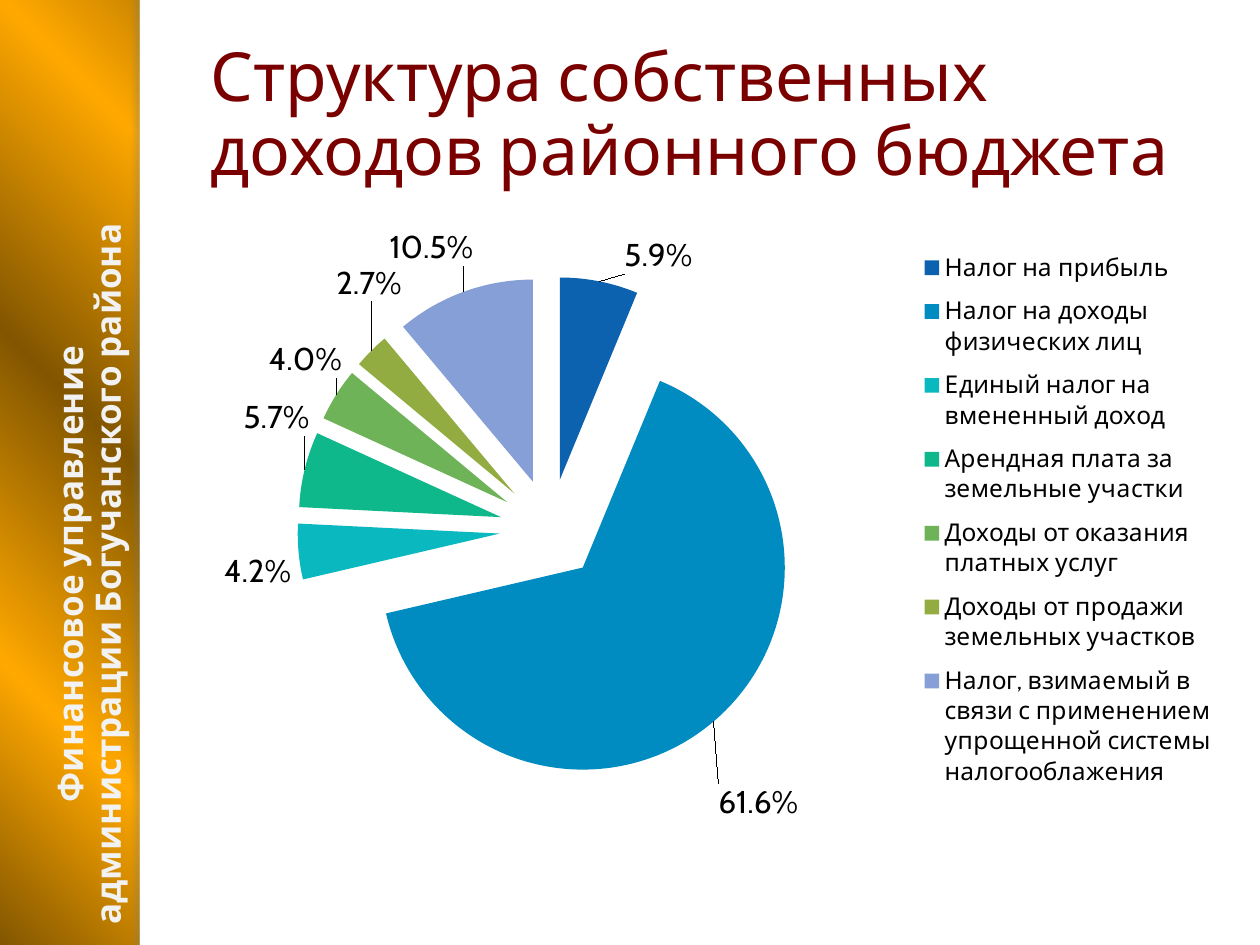
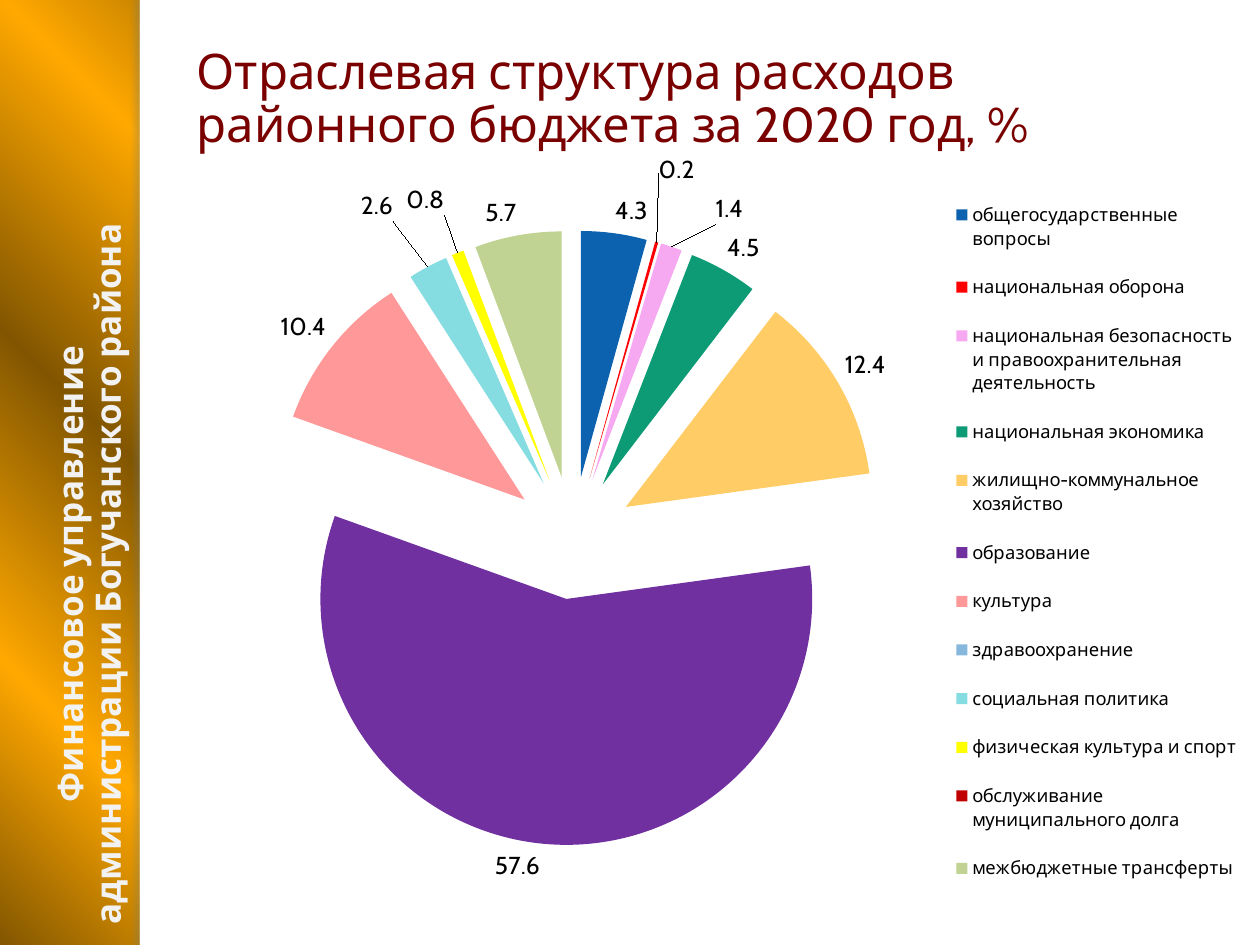
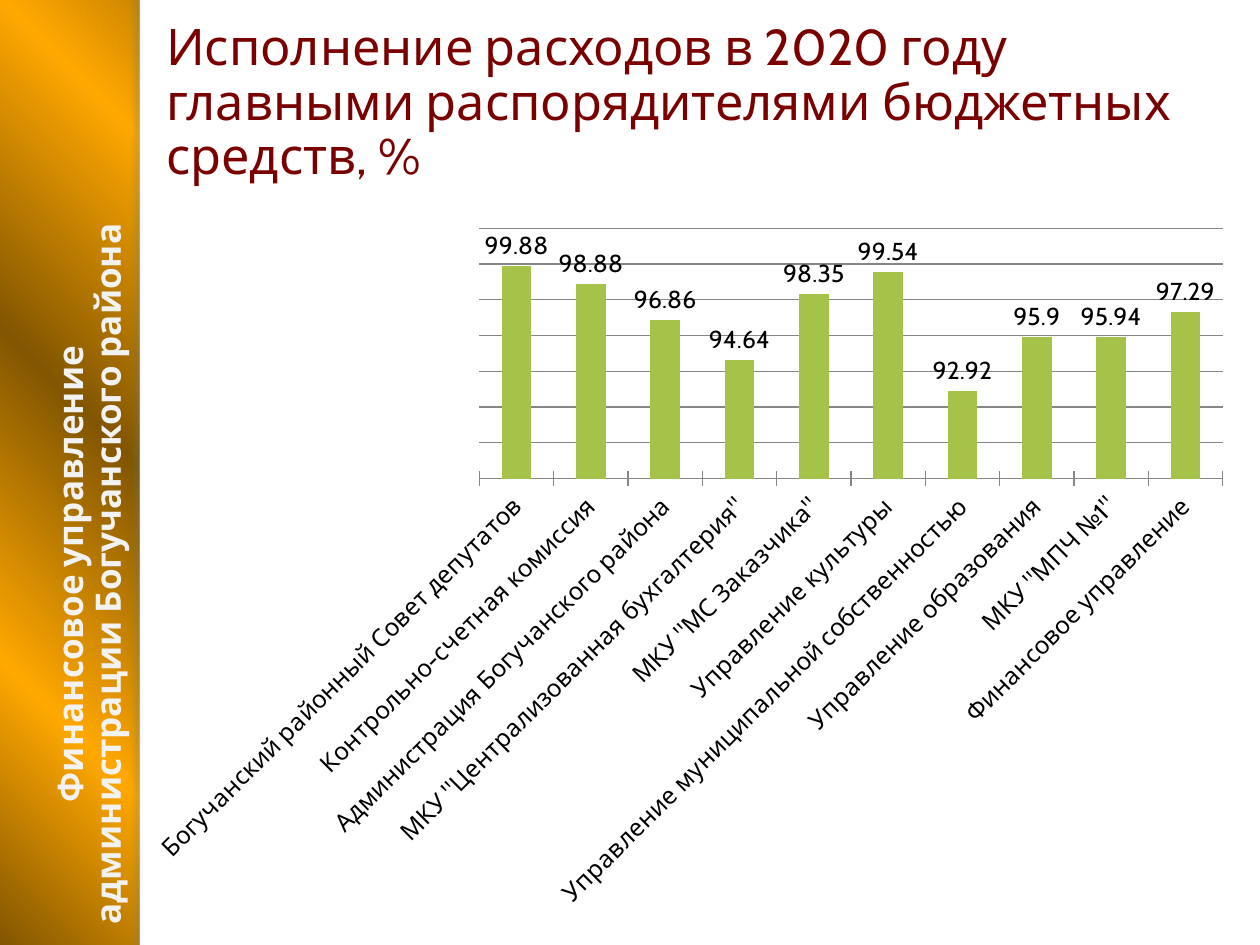
from pptx import Presentation, util as u
from pptx.chart.data import CategoryChartData
from pptx.dml.color import RGBColor
from pptx.enum import chart as ch, shapes, text
from pptx.oxml import parse_xml
from pptx.oxml.ns import nsdecls

PX = 9144
FONT = "Cabin"
COLORS = {
    "white": "FFFFFF", "black": "000000", "title": "7A0000", "band_text": "F2F2F2",
    "dark_gold": "825600", "gold": "FFA800", "shadow": "6C7A7C", "grid": "868686",
    "blue": "0D62AF", "azure": "008BC1", "cyan": "0AB8C0", "emerald": "0EB88A",
    "leaf": "6EB357", "olive": "92AC41", "periwinkle": "879FD7", "lime": "A5C249",
    "red": "FF0000", "pink": "F6A8F0", "green": "0C9B74", "sand": "FFCC66",
    "purple": "7030A0", "salmon": "FF9999", "sky": "86B8DD", "aqua": "86DDE1",
    "yellow": "FFFF00", "crimson": "C00000", "pale_lime": "C0D392",
}
BAND_STOPS = (0, 13, 28, 43, 58, 72, 87, 100)
DEPARTMENT = "Финансовое управление администрации Богучанского района"

INCOME = [
    ("Налог на прибыль", 0.059, "blue"),
    ("Налог на доходы физических лиц", 0.616, "azure"),
    ("Единый налог на вмененный доход", 0.042, "cyan"),
    ("Арендная плата за земельные участки", 0.057, "emerald"),
    ("Доходы от оказания платных услуг", 0.04, "leaf"),
    ("Доходы от продажи земельных участков", 0.027, "olive"),
    ("Налог, взимаемый в связи с применением упрощенной системы налогооблажения",
     0.105, "periwinkle"),
]
INCOME_SHIFTS = {0: (0.02, 0), 1: (0, 0.09), 3: (0.01, -0.05), 4: (0.01, -0.02),
                 5: (0.03, -0.07), 6: (0.01, -0.03)}
SPENDING = [
    ("общегосударственные вопросы", 4.3, "blue"),
    ("национальная оборона", 0.2, "red"),
    ("национальная безопасность и правоохранительная деятельность", 1.4, "pink"),
    ("национальная экономика", 4.5, "green"),
    ("жилищно-коммунальное хозяйство", 12.4, "sand"),
    ("образование", 57.6, "purple"),
    ("культура", 10.4, "salmon"),
    ("здравоохранение", 0, "sky"),
    ("социальная политика", 2.6, "aqua"),
    ("физическая культура и спорт", 0.8, "yellow"),
    ("обслуживание муниципального долга", 0, "crimson"),
    ("межбюджетные трансферты", 5.7, "pale_lime"),
]
SPENDING_SHIFTS = {1: (0, -0.08), 2: (0.04, -0.02), 7: (-0.03, 0), 8: (-0.03, -0.05),
                   9: (-0.01, -0.04), 10: (-0.01, -0.08)}
EXECUTION = [
    ("Богучанский районный Совет депутатов", 99.88),
    ("Контрольно-счетная комиссия", 98.88),
    ("Администрация Богучанского района", 96.86),
    ('МКУ "Централизованная бухгалтерия"', 94.64),
    ('МКУ "МС Заказчика"', 98.35),
    ("Управление культуры", 99.54),
    ("Управление муниципальной собственностью", 92.92),
    ("Управление образования", 95.9),
    ('МКУ "МПЧ №1"', 95.94),
    ("Финансовое управление", 97.29),
]


def rgb(color):
    return RGBColor.from_string(COLORS[color])


def manual_layout(x, y, w=None, h=None, inner=False):
    target = '<c:layoutTarget val="inner"/>' if inner else ""
    modes = '<c:xMode val="edge"/><c:yMode val="edge"/>' if w else ""
    size = f'<c:w val="{w}"/><c:h val="{h}"/>' if w else ""
    return parse_xml(
        f'<c:layout {nsdecls("c")}><c:manualLayout>{target}{modes}'
        f'<c:x val="{x}"/><c:y val="{y}"/>{size}</c:manualLayout></c:layout>')


class Deck:
    def __init__(self):
        self.prs = Presentation()
        self.prs.slide_width, self.prs.slide_height = 1000 * PX, 750 * PX
        self.layout = self.prs.slide_layouts[5]
        self.slide = None

    def add_slide(self, title, box, size):
        self.slide = self.prs.slides.add_slide(self.layout)
        heading = self.slide.shapes.title
        heading.left, heading.top, heading.width, heading.height = (n * PX for n in box)
        self.add_words(heading.text_frame, title, size, "title", text.PP_ALIGN.LEFT)

    def add_words(self, frame, words, size, color, align, bold=False):
        frame.word_wrap = True
        frame.auto_size = text.MSO_AUTO_SIZE.NONE
        frame.vertical_anchor = text.MSO_ANCHOR.MIDDLE
        paragraph = frame.paragraphs[0]
        paragraph.alignment = align
        paragraph.line_spacing = 0.9
        run = paragraph.add_run()
        run.text = words
        run.font.name, run.font.size, run.font.bold = FONT, u.Pt(size), bold
        run.font.color.rgb = rgb(color)

    def panel(self, *box):
        panel = self.slide.shapes.add_shape(
            shapes.MSO_SHAPE.RECTANGLE, *(n * PX for n in box))
        panel.shadow.inherit = False
        panel.fill.solid()
        panel.fill.fore_color.rgb = rgb("white")
        panel.line.fill.background()
        return panel

    def band(self):
        fill = self.layout.background.fill
        fill.gradient()
        fill.gradient_angle = 45
        stops = "".join(
            f'<a:gs pos="{pos * 1000}"><a:srgbClr val="{COLORS[color]}"/></a:gs>'
            for pos, color in zip(BAND_STOPS, ("dark_gold", "gold") * 4))
        gradient = self.layout.element.xpath(".//p:bgPr/a:gradFill/a:gsLst")[0]
        gradient.getparent().replace(
            gradient, parse_xml(f'<a:gsLst {nsdecls("a")}>{stops}</a:gsLst>'))

        page = self.panel(111, 0, 889, 750)
        edge = self.panel(111, 0, 8, 750)
        edge.element.spPr.xpath("a:effectLst")[0].append(parse_xml(
            f'<a:outerShdw {nsdecls("a")} blurRad="38100" dist="38100" dir="10800000">'
            f'<a:srgbClr val="{COLORS["shadow"]}"><a:alpha val="25000"/></a:srgbClr>'
            '</a:outerShdw>'))
        department = self.slide.shapes.add_textbox(
            *(n * PX for n in (-222, 417, 588, 77)))
        department.rotation = 270
        self.add_words(department.text_frame, DEPARTMENT, 20, "band_text",
                       text.PP_ALIGN.CENTER, bold=True)
        for position, part in enumerate((page, edge, department), 2):
            self.layout.element.cSld.spTree.insert(position, part.element)

    def chart(self, kind, rows, box, number_format="General"):
        data = CategoryChartData(number_format=number_format)
        data.categories = [row[0] for row in rows]
        data.add_series("Series 1", [row[1] for row in rows])
        chart = self.slide.shapes.add_chart(kind, *(n * PX for n in box), data).chart
        chart.has_title = False
        chart.has_legend = False
        chart.font.name, chart.font.size = FONT, u.Pt(18)
        chart.font.color.rgb = rgb("black")
        return chart

    def labels(self, series, size, number_format, position):
        labels = series.data_labels
        labels.show_value = True
        labels.number_format, labels.number_format_is_linked = number_format, False
        labels.position = position
        labels.font.size = u.Pt(size)

    def pie(self, rows, box, plot_box, legend_box, legend_size, label_size,
            number_format, shifts):
        chart = self.chart(ch.XL_CHART_TYPE.PIE, rows, box, number_format)
        plot = chart.plots[0]
        plot.vary_by_categories = True
        series = plot.series[0]
        chart.element.xpath(".//c:ser/c:tx")[0].addnext(
            parse_xml(f'<c:explosion {nsdecls("c")} val="25"/>'))
        for index, (_, _, color) in enumerate(rows):
            fill = series.points[index].format.fill
            fill.solid()
            fill.fore_color.rgb = rgb(color)

        outside = ch.XL_LABEL_POSITION.OUTSIDE_END
        self.labels(series, label_size, number_format, outside)
        for index, shift in shifts.items():
            label = series.points[index].data_label
            label.font.size = u.Pt(label_size)
            label.position = outside
            mark = chart.element.xpath(f'.//c:dLbl/c:idx[@val="{index}"]')[0]
            mark.addnext(parse_xml(
                f'<c:numFmt {nsdecls("c")} formatCode="{number_format}" sourceLinked="0"/>'))
            mark.addnext(manual_layout(*shift))

        chart.has_legend = True
        chart.legend.position = ch.XL_LEGEND_POSITION.RIGHT
        chart.legend.include_in_layout = False
        chart.legend.font.size = u.Pt(legend_size)
        for old in chart.element.xpath(".//c:legend/c:layout | .//c:plotArea/c:layout"):
            old.getparent().remove(old)
        chart.element.xpath(".//c:legendPos")[0].addnext(manual_layout(*legend_box))
        chart.element.xpath(".//c:plotArea")[0].insert(
            0, manual_layout(*plot_box, inner=True))

    def columns(self, rows, box, low, high, step):
        chart = self.chart(ch.XL_CHART_TYPE.COLUMN_CLUSTERED, rows, box)
        plot = chart.plots[0]
        plot.vary_by_categories = False
        plot.gap_width = 150
        series = plot.series[0]
        series.format.fill.solid()
        series.format.fill.fore_color.rgb = rgb("lime")
        self.labels(series, 14, "General", ch.XL_LABEL_POSITION.OUTSIDE_END)

        scale = chart.value_axis
        scale.minimum_scale, scale.maximum_scale, scale.major_unit = low, high, step
        scale.visible = False
        scale.has_major_gridlines = True
        names = chart.category_axis
        names.major_tick_mark = ch.XL_TICK_MARK.CROSS
        names.tick_labels.font.size = u.Pt(14)
        chart.element.xpath(".//c:catAx/c:txPr/a:bodyPr")[0].set("rot", "-2700000")
        for line in (scale.major_gridlines.format.line, names.format.line):
            line.color.rgb = rgb("grid")
            line.width = u.Pt(0.75)


def main():
    deck = Deck()

    deck.add_slide("Структура собственных доходов районного бюджета",
                   (157, 30, 820, 125), 38.7)
    deck.band()
    deck.pie(INCOME, (35, 175, 945, 495), (0.15, 0.09, 0.55, 0.81),
             (0.73, 0.03, 0.26, 0.9), 14, 18, "0.0%", INCOME_SHIFTS)

    deck.add_slide("Отраслевая структура расходов районного бюджета за 2020 год, %",
                   (146, 29, 780, 101), 28)
    deck.pie(SPENDING, (161, 123, 827, 614), (0.06, 0.09, 0.59, 0.81),
             (0.72, 0.03, 0.28, 0.94), 10.5, 14, "0.0", SPENDING_SHIFTS)

    deck.add_slide("Исполнение расходов в 2020 году главными распорядителями "
                   "бюджетных средств, %", (122, 36, 831, 93), 28.8)
    deck.columns(EXECUTION, (106, 170, 882, 562), 88, 102, 2)

    deck.prs.save("out.pptx")


if __name__ == "__main__":
    main()
